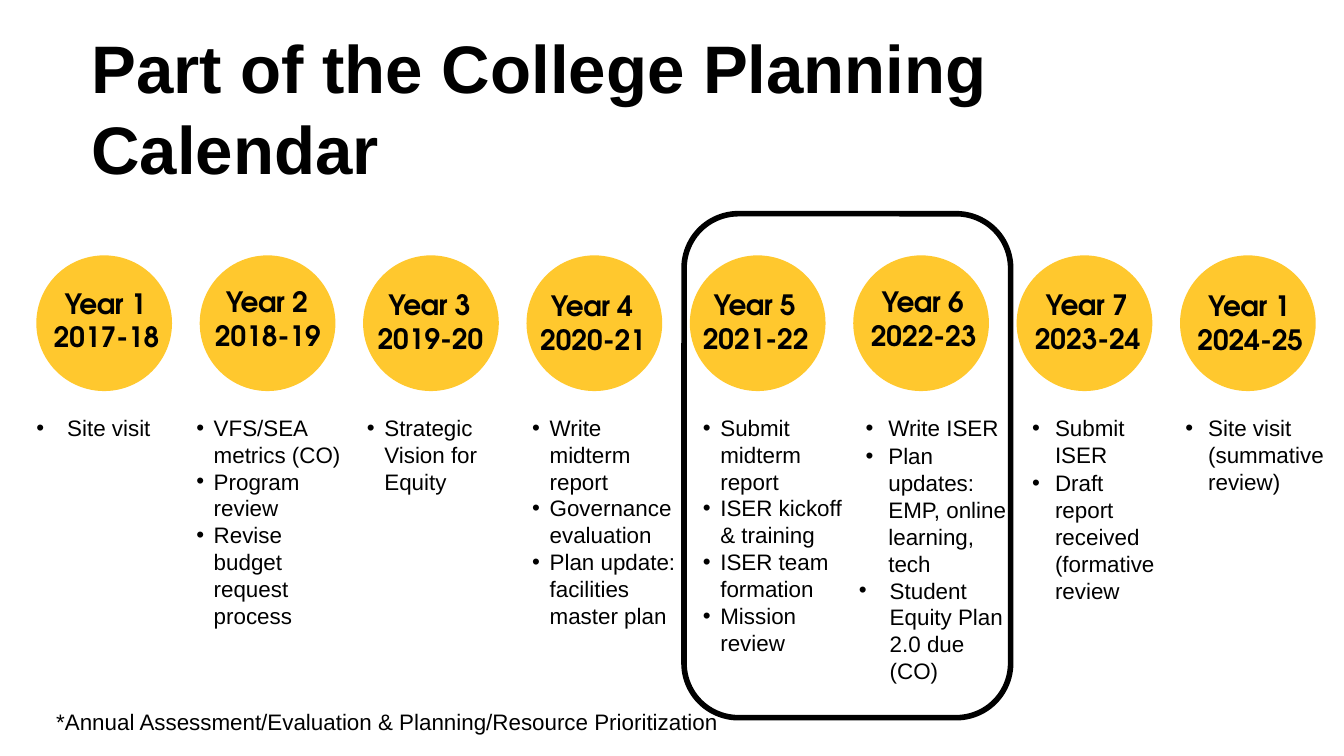
from pptx import Presentation
from pptx.dml.color import RGBColor
from pptx.enum.shapes import MSO_SHAPE as SHAPE
from pptx.enum.text import MSO_ANCHOR as ANCHOR, MSO_AUTO_SIZE as AUTO, PP_ALIGN as ALIGN
from pptx.oxml.ns import qn
from pptx.util import Inches, Pt

TITLE = "Part of the College Planning Calendar"
FOOTNOTE = "*Annual Assessment/Evaluation & Planning/Resource Prioritization"
BLACK, GOLD = "000000", "FFC82E"
SNUG, MEDIUM, LOOSE = (0.14, -0.13), (0.23, -0.17), (0.24, -0.23, 0.08)

YEARS = [
    ("1", "2017-18", (0.39, 2.12), (0.26, 1.02, 0.21), [(LOOSE, ["Site visit"])]),
    ("2", "2018-19", (1.59, 2.11), (1.45, 1.15, 1.63), [
        (SNUG, ["VFS/SEA metrics (CO)", "Program review", "Revise budget request process"])]),
    ("3", "2019-20", (2.80, 2.13), (2.72, 1.03, 0.62), [(SNUG, ["Strategic Vision for Equity"])]),
    ("4", "2020-21", (4.01, 2.14), (3.95, 1.14, 1.63), [
        (SNUG, ["Write midterm report", "Governance evaluation",
                "Plan update: facilities master plan"])]),
    ("5", "2021-22", (5.22, 2.13), (5.22, 1.06, 1.83), [
        (SNUG, ["Submit midterm report", "ISER kickoff & training",
                "ISER team formation", "Mission review"])]),
    ("6", "2022-23", (6.47, 2.11), (6.38, 1.22, 2.04), [
        (MEDIUM, ["Write ISER", "Plan updates: EMP, online learning, tech"]),
        (LOOSE, ["Student Equity Plan 2.0 due (CO)"])]),
    ("7", "2023-24", (7.69, 2.13), (7.62, 1.01, 1.44), [
        (MEDIUM, ["Submit ISER", "Draft report received (formative review"])]),
    ("1", "2024-25", (8.90, 2.14), (8.76, 1.16, 0.62), [
        (MEDIUM, ["Site visit (summative review)"])]),
]
CIRCLE_LEFT, CIRCLE_LAST, CIRCLE_TOP, CIRCLE_SIZE = 0.27, 8.78, 1.9, 1.01
CIRCLE_STEP = (CIRCLE_LAST - CIRCLE_LEFT) / (len(YEARS) - 1)
LIST_TOP = 3.07

BODY = {"name": "Arial", "size": Pt(12), "bold": False}
LABEL = {"name": "TeX Gyre Adventor", "size": Pt(15), "bold": True}
HEADING = {"name": "Arial", "size": Pt(36), "bold": True}
TIGHT = {"margin_left": 0, "margin_top": Inches(0.01), "margin_right": 0, "margin_bottom": 0,
         "word_wrap": True, "auto_size": AUTO.SHAPE_TO_FIT_TEXT}


def color(value):
    return RGBColor.from_string(value)


def set_all(target, values):
    for name, value in values.items():
        setattr(target, name, value)


def add_run(p, text, style):
    r = p.add_run()
    r.text = text
    set_all(r.font, style)
    r.font.color.rgb = color(BLACK)
    return r


def add_box(shapes, box, frame):
    tf = shapes.add_textbox(*map(Inches, box)).text_frame
    set_all(tf, frame)
    return tf


def indent(p, margin, first=0, right=0):
    pPr = p._p.get_or_add_pPr()
    for name, value in (("marL", margin), ("marR", right), ("indent", first)):
        pPr.set(name, str(Inches(value)))
    return pPr


def add_year(shapes, left, number, span, label_at):
    group = shapes.add_group_shape().shapes
    sp = group.add_shape(SHAPE.OVAL, *map(Inches, (left, CIRCLE_TOP, CIRCLE_SIZE, CIRCLE_SIZE)))
    sp.shadow.inherit = False
    sp.fill.solid()
    sp.fill.fore_color.rgb = color(GOLD)
    sp.line.fill.background()
    tf = add_box(group, (*label_at, 0.86, 0.52), TIGHT)
    p = tf.paragraphs[0]
    indent(p, 0.09)
    r = add_run(p, "Year ", LABEL)
    r.font._element.set("spc", "-30")
    add_run(p, number, LABEL)
    p = tf.add_paragraph()
    indent(p, 0.01)
    add_run(p, span, LABEL)


def add_list(shapes, place, groups):
    left, width, height = place
    tf = add_box(shapes, (left, LIST_TOP, width, height), TIGHT)
    items = [(shift, text) for shift, texts in groups for text in texts]
    for i, (shift, text) in enumerate(items):
        p = tf.add_paragraph() if i else tf.paragraphs[0]
        pPr = indent(p, *shift)
        for tag, values in (("a:buFont", {"typeface": "Arial"}), ("a:buChar", {"char": "•"})):
            pPr.append(pPr.makeelement(qn(tag), values))
        if i and shift == MEDIUM:
            p.space_before = Pt(0.8)
        add_run(p, text, BODY)


prs = Presentation()
prs.slide_width = Inches(10)
prs.slide_height = prs.slide_width * 9 // 16
s = prs.slides.add_slide(prs.slide_layouts[5])
shapes = s.shapes

title = shapes.title
set_all(title, {"left": Inches(0.58), "top": Inches(0.28),
                "width": Inches(8.9), "height": Inches(1.03)})
set_all(title.text_frame, {"vertical_anchor": ANCHOR.MIDDLE, "word_wrap": True,
                           "auto_size": AUTO.NONE})
p = title.text_frame.paragraphs[0]
p.alignment = ALIGN.LEFT
add_run(p, TITLE, HEADING)

for i, (number, span, label_at, place, groups) in enumerate(YEARS):
    add_year(shapes, CIRCLE_LEFT + i * CIRCLE_STEP, number, span, label_at)
    add_list(shapes, place, groups)

tf = add_box(shapes, (0.32, 5.22, 5.16, 0.3),
             {"word_wrap": False, "auto_size": AUTO.SHAPE_TO_FIT_TEXT})
add_run(tf.paragraphs[0], FOOTNOTE, BODY)

frame = shapes.add_shape(SHAPE.ROUNDED_RECTANGLE, *map(Inches, (5.09, 1.59, 2.43, 3.75)))
frame.shadow.inherit = False
frame.fill.background()
frame.line.color.rgb = color(BLACK)
frame.line.width = Pt(3)

prs.save("out.pptx")
